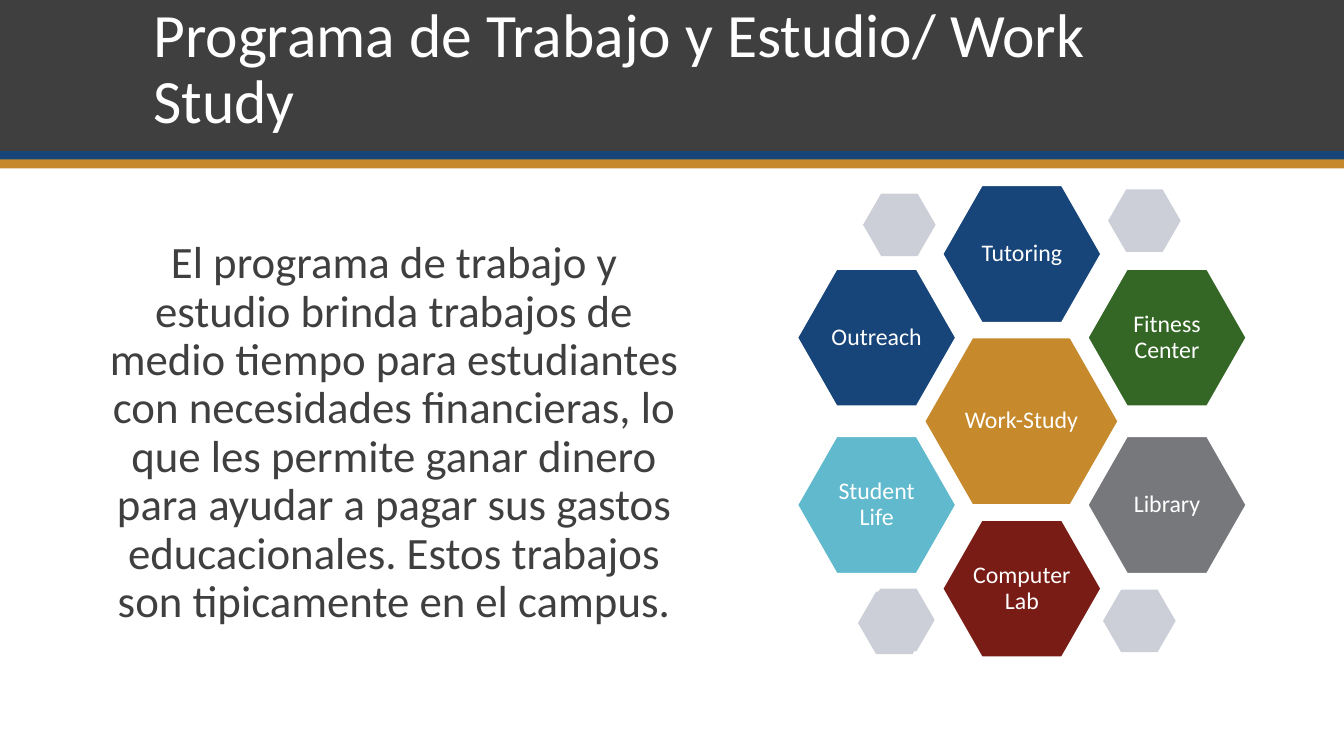
from lxml.etree import SubElement
from pptx import Presentation
from pptx.dml.color import RGBColor
from pptx.enum.shapes import MSO_SHAPE
from pptx.enum.text import MSO_ANCHOR, MSO_AUTO_SIZE, PP_ALIGN
from pptx.oxml.ns import qn
from pptx.util import Pt

PX = 9144  # 100 px to the inch
FONT = "Calibri"
HEX = {
    "dark": "3F3F3F", "blue": "174479", "gold": "C6892B", "white": "FFFFFF",
    "green": "346625", "gray": "76787B", "red": "7A1C16", "sky": "60B9CD",
    "pale": "CCCFD7",
}
TITLE = "Programa de Trabajo y Estudio/ Work Study"
BODY = (
    "El programa de trabajo y estudio brinda trabajos de medio tiempo para "
    "estudiantes con necesidades financieras, lo que les permite ganar dinero "
    "para ayudar a pagar sus gastos educacionales. Estos trabajos son "
    "tipicamente en el campus."
)
# Label, colour, column and half-row steps from the centre
JOBS = [
    ("Tutoring", "blue", 0, -2), ("Fitness Center", "green", 1, -1),
    ("Library", "gray", 1, 1), ("Computer Lab", "red", 0, 2),
    ("Student Life", "sky", -1, 1), ("Outreach", "blue", -1, -1),
]
# Left and top inside the cluster
DOTS = [(61, 403), (309, 4), (66, 8), (65, 400), (304, 401)]


def color(name):
    return RGBColor.from_string(HEX[name])


def place(shape, x, y, w, h):
    shape.left, shape.top = x * PX, y * PX
    shape.width, shape.height = w * PX, h * PX


def write(frame, text, size, tone, align, anchor):
    frame.word_wrap = True
    frame.auto_size = MSO_AUTO_SIZE.NONE
    frame.vertical_anchor = anchor
    para = frame.paragraphs[0]
    para.alignment = align
    para.line_spacing = 0.9
    para.space_before = Pt(0)
    run = para.add_run()
    run.text = text
    run.font.name = FONT
    run.font.size = Pt(size)
    run.font.color.rgb = color(tone)
    return para


def draw(slide, kind, box, tone):
    shape = slide.shapes.add_shape(kind, *(n * PX for n in box))
    shape.shadow.inherit = False
    shape.fill.solid()
    shape.fill.fore_color.rgb = color(tone)
    shape.line.fill.background()
    return shape


def header(slide, x, y, w):
    for top, high, tone in [(0, 150, "dark"), (150, 9, "blue"), (158, 9, "gold")]:
        draw(slide, MSO_SHAPE.RECTANGLE, (x, y + top, w, high), tone)
    title = slide.shapes.title
    slide.shapes.element.append(title.element)  # in front of the bands
    place(title, x + 142, y + 28, w - 283, 113)
    write(title.text_frame, TITLE, 44, "white", PP_ALIGN.LEFT, MSO_ANCHOR.BOTTOM)


def summary(slide, x, y, w, h):
    body = slide.placeholders[1]
    place(body, x, y, w, h)
    para = write(body.text_frame, BODY, 32, "dark", PP_ALIGN.CENTER, MSO_ANCHOR.TOP)
    props = para._p.get_or_add_pPr()
    props.set("marL", "0")
    props.set("indent", "0")
    SubElement(props, qn("a:buNone"))


def hexagon(slide, cx, cy, w, h, text, tone):
    shape = draw(slide, MSO_SHAPE.HEXAGON, (cx - w // 2, cy - h // 2, w, h), tone)
    shape.adjustments[0] = 0.286
    shape.line.color.rgb = color("white")
    shape.line.width = Pt(1)
    frame = shape.text_frame
    frame.margin_left = frame.margin_right = 2 * PX
    frame.margin_top = frame.margin_bottom = 2 * PX
    write(frame, text, 17, "white", PP_ALIGN.CENTER, MSO_ANCHOR.MIDDLE)


def cluster(slide, x, y, w, h):
    """Ring of jobs around one central hexagon, with pale dots between."""
    cx, cy = x + w // 2, y + h // 2
    for left, top in DOTS:
        dot = draw(slide, MSO_SHAPE.HEXAGON, (x + left, y + top, 72, 62), "pale")
        dot.adjustments[0] = 0.289
    hexagon(slide, cx, cy, 192, 166, "Work-Study", "gold")
    for text, tone, col, row in JOBS:
        hexagon(slide, cx + col * 144, cy + row * 83, 157, 136, text, tone)


def main():
    deck = Presentation()
    deck.slide_width, deck.slide_height = 1333 * PX, 750 * PX
    slide = deck.slides.add_slide(deck.slide_layouts[1])
    header(slide, 0, 0, 1333)
    summary(slide, 97, 233, 588, 442)
    cluster(slide, 790, 184, 446, 468)
    deck.save("out.pptx")


if __name__ == "__main__":
    main()
